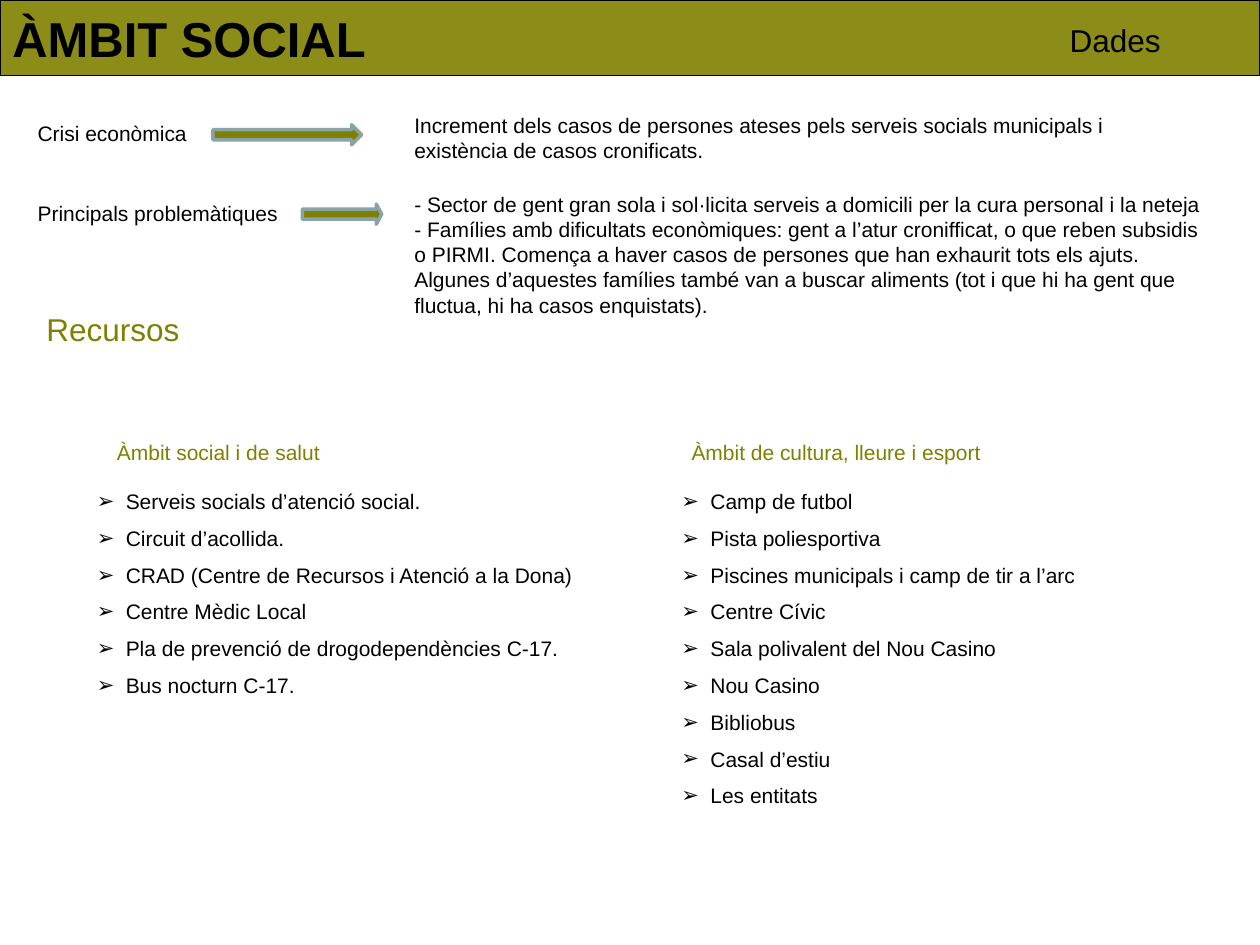
from lxml.etree import SubElement as Sub
from pptx import Presentation
from pptx.dml.color import RGBColor
from pptx.enum.shapes import MSO_SHAPE as Shape
from pptx.enum.text import MSO_ANCHOR as Anchor, MSO_AUTO_SIZE as Fit
from pptx.oxml.ns import qn
from pptx.util import Inches, Pt

OLIVE = RGBColor(0x80, 0x80, 0x00)
GREY = RGBColor(0x89, 0xA4, 0xA7)
BLACK = RGBColor(0, 0, 0)

CRISIS = ["Increment dels casos de persones ateses pels serveis socials municipals i "
          "existència de casos cronificats."]
ISSUES = [
    "- Sector de gent gran sola i sol·licita serveis a domicili per la cura personal i la neteja",
    "- Famílies amb dificultats econòmiques: gent a l’atur cronifficat, o que reben subsidis "
    "o PIRMI. Comença a haver casos de persones que han exhaurit tots els ajuts. Algunes "
    "d’aquestes famílies també van a buscar aliments (tot i que hi ha gent que fluctua, "
    "hi ha casos enquistats).",
]
HEALTH = [
    "Serveis socials d’atenció social.",
    "Circuit d’acollida.",
    "CRAD (Centre de Recursos i Atenció a la Dona)",
    "Centre Mèdic Local",
    "Pla de prevenció de drogodependències C-17.",
    "Bus nocturn C-17.",
]
CULTURE = [
    "Camp de futbol",
    "Pista poliesportiva",
    "Piscines municipals i camp de tir a l’arc",
    "Centre Cívic",
    "Sala polivalent del Nou Casino",
    "Nou Casino",
    "Bibliobus",
    "Casal d’estiu",
    "Les entitats",
]


def add_mark(para):
    """Give the paragraph an arrowhead bullet with a hanging indent."""
    props = para._p.get_or_add_pPr()
    props.set("marL", str(Inches(0.23)))
    props.set("indent", str(-Inches(0.23)))
    Sub(props, qn("a:buFont"), typeface="Arial")
    Sub(props, qn("a:buChar"), char="➢")


def write(frame, lines, size=12, color=BLACK, bold=False, gap=0, marks=False):
    frame.word_wrap = True
    for i, line in enumerate(lines):
        para = frame.paragraphs[0] if i == 0 else frame.add_paragraph()
        if i and gap:
            para.space_before = Pt(gap)
        if marks:
            add_mark(para)
        run = para.add_run()
        run.text = line
        font = run.font
        font.name, font.size, font.bold = "Arial", Pt(size), bold
        font.color.rgb = color


def add_text(slide, x, y, w, h, lines, **style):
    box = slide.shapes.add_textbox(Inches(x), Inches(y), Inches(w), Inches(h))
    write(box.text_frame, lines, **style)
    box.text_frame.auto_size = Fit.SHAPE_TO_FIT_TEXT


def add_block(slide, kind, x, y, w, h, line, width):
    block = slide.shapes.add_shape(kind, Inches(x), Inches(y), Inches(w), Inches(h))
    block.shadow.inherit = False
    block.fill.solid()
    block.fill.fore_color.rgb = OLIVE
    block.line.color.rgb = line
    block.line.width = Pt(width)
    return block


def add_header(slide, x, y, w, h):
    bar = add_block(slide, Shape.RECTANGLE, x, y, w, h, BLACK, 0.75)
    tint = bar._element.spPr.find(qn("a:solidFill"))[0]
    Sub(tint, qn("a:alpha"), val="90000")
    write(bar.text_frame, ["ÀMBIT SOCIAL"], size=28, bold=True)
    bar.text_frame.vertical_anchor = Anchor.MIDDLE
    bar.text_frame.paragraphs[0].alignment = 1
    add_text(slide, x + w - 1.61, y + 0.12, 1.61, 0.4, ["Dades"], size=18)


def add_fact(slide, x, y, w, h, name, lines, start, length, tip):
    """Place a label, an arrow and the text that the arrow points to."""
    add_text(slide, x, y + 0.07, 3.47, 0.3, [name])
    arrow = add_block(slide, Shape.RIGHT_ARROW, x + start, y + 0.15, length, 0.16, GREY, 2)
    arrow.adjustments[1] = tip
    add_text(slide, x + 2.99, y, w - 2.99, h, lines)


def add_list(slide, x, y, w, h, title, items, inset):
    add_text(slide, x + inset, y, 2.84, 0.3, [title], color=OLIVE)
    add_text(slide, x, y + 0.39, w, h - 0.39, items, gap=6.6, marks=True)


def main():
    deck = Presentation()
    deck.slide_width, deck.slide_height = Inches(10), Inches(7.5)
    slide = deck.slides.add_slide(deck.slide_layouts[6])
    add_header(slide, 0, 0, 10, 0.6)
    add_fact(slide, 0.2, 0.84, 9.05, 0.51, "Crisi econòmica", CRISIS, 1.49, 1.18, 0.5)
    add_fact(slide, 0.2, 1.47, 9.45, 1.3, "Principals problemàtiques", ISSUES, 2.2, 0.63, 0.27)
    add_text(slide, 0.27, 2.41, 3.46, 0.4, ["Recursos"], size=18, color=OLIVE)
    add_list(slide, 0.67, 3.44, 6.14, 2.19, "Àmbit social i de salut", HEALTH, 0.16)
    add_list(slide, 5.31, 3.44, 3.55, 3.09, "Àmbit de cultura, lleure i esport", CULTURE, 0.08)
    deck.save("out.pptx")


if __name__ == "__main__":
    main()
